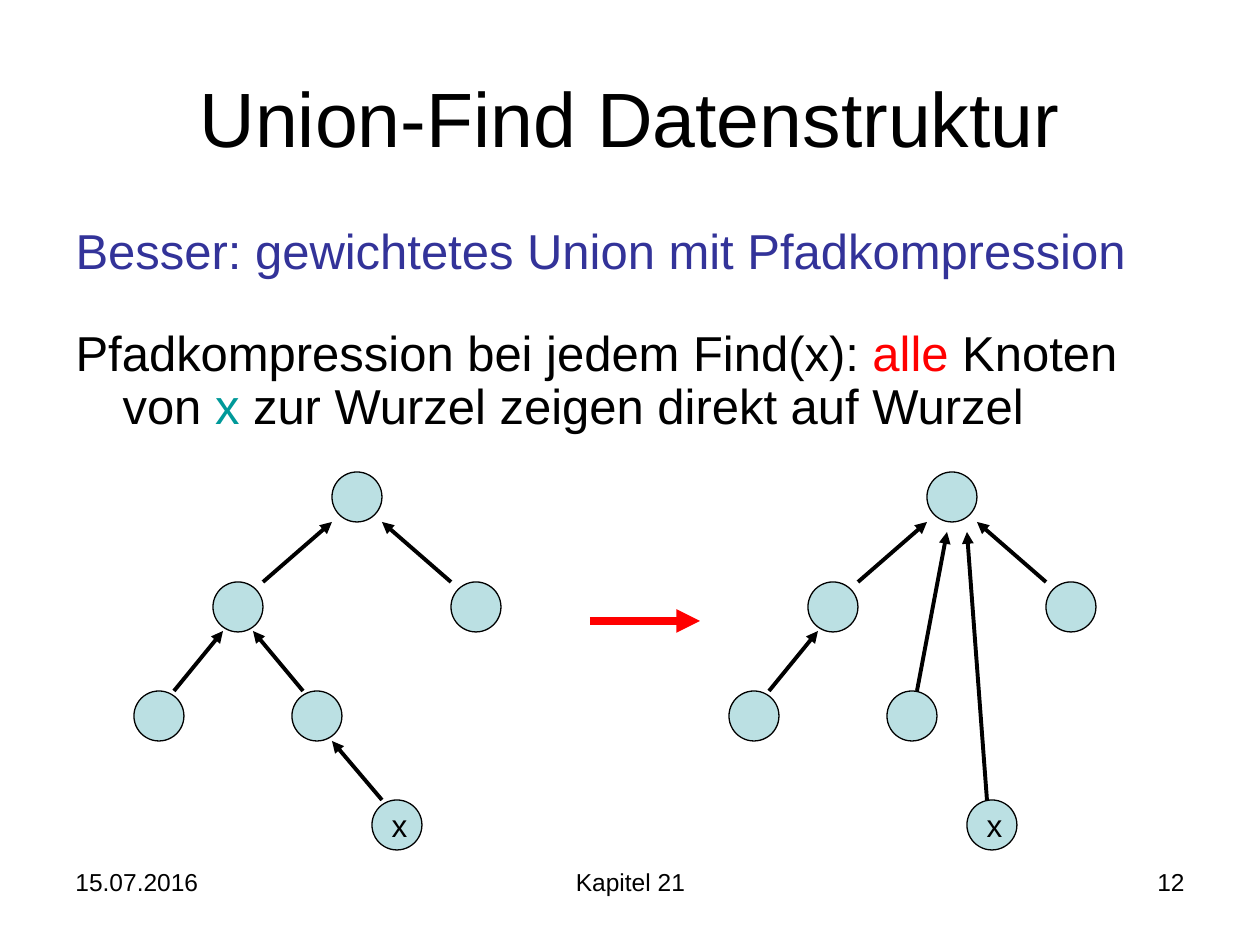
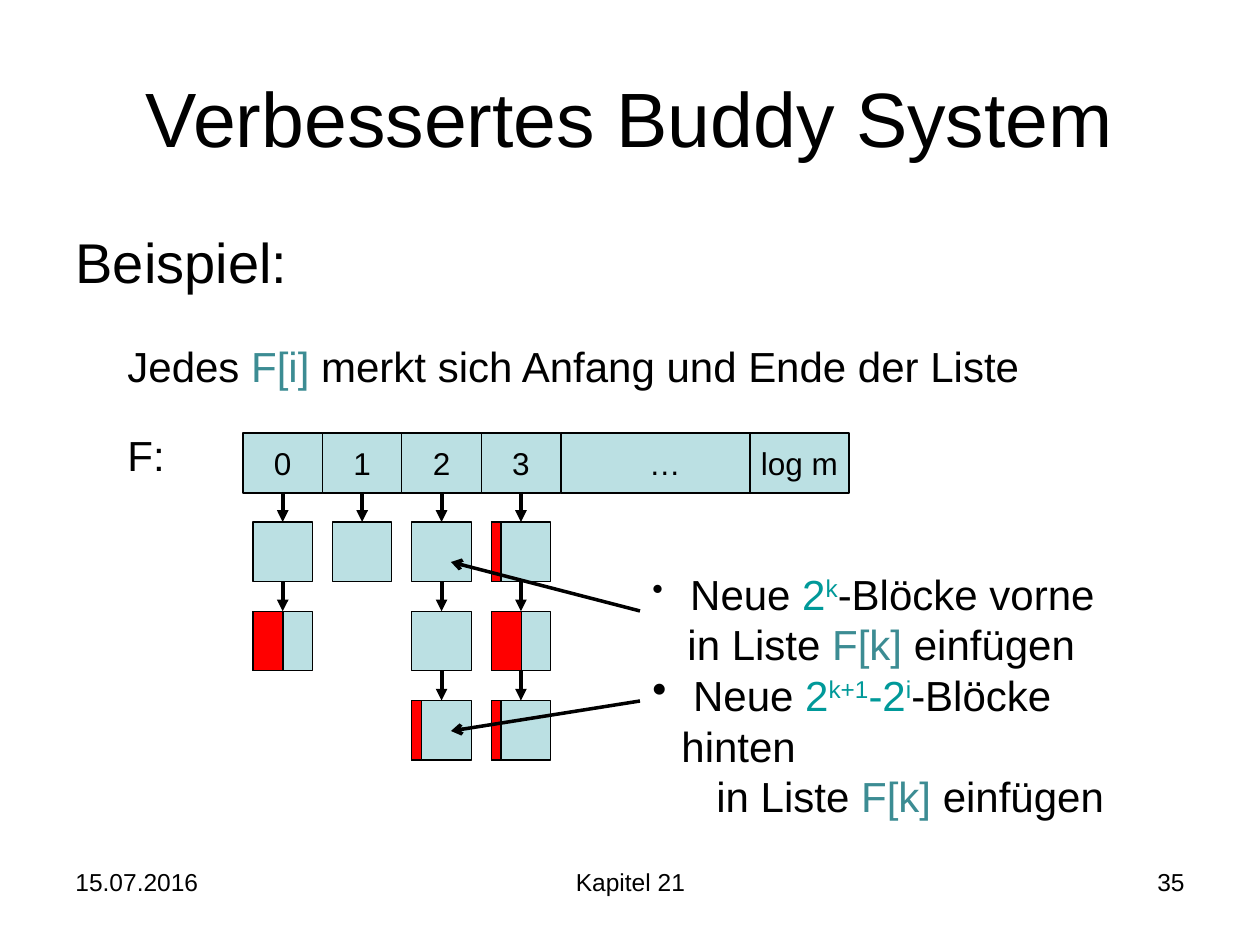
import pptx
import pptx.util
import pptx.dml.color
import pptx.enum.shapes
import pptx.enum.text
import pptx.oxml
import pptx.oxml.ns

# Shared settings: all lengths are px, 126 to the inch
PX = 914400 / 126
FONT = "Arial"
COLOURS = {
    "text": "000000", "heading": "333399", "alert": "FF0000",
    "variable": "009999", "array": "3C8C93", "block": "BBE0E3",
}
ALIGN = pptx.enum.text.PP_ALIGN
KIND = pptx.enum.shapes.MSO_SHAPE
TITLE_AT = (63, 38, 1134, 158)
BODY_AT = (63, 221, 1134, 624)
INK = "text"


def write(paragraph, parts, size, align=ALIGN.LEFT, margin=0, indent=0, bullet=False):
    """Fill a paragraph with (text, colour[, baseline[, size]]) parts."""
    paragraph.alignment = align
    properties = paragraph._p.get_or_add_pPr()
    properties.set("marL", str(round(margin * PX)))
    properties.set("indent", str(round(indent * PX)))
    mark = pptx.oxml.parse_xml(
        f'<a:{"buChar" if bullet else "buNone"} {pptx.oxml.ns.nsdecls("a")}'
        f'{" char=" + chr(34) + "•" + chr(34) if bullet else ""}/>')
    properties.append(mark)
    for text, colour, *extra in parts:
        run = paragraph.add_run()
        run.text = text
        run.font.name = FONT
        run.font.size = pptx.util.Pt(extra[1] if len(extra) > 1 else size)
        run.font.color.rgb = pptx.dml.color.RGBColor.from_string(COLOURS[colour])
        if extra and extra[0]:
            run._r.get_or_add_rPr().set("baseline", str(extra[0] * 1000))


def place(shape, box):
    shape.left, shape.top, shape.width, shape.height = [round(v * PX) for v in box]


deck = pptx.Presentation()
deck.slide_width, deck.slide_height = round(1260 * PX), round(945 * PX)

# Titles, bodies and footers
pages = [
    ("Union-Find Datenstruktur", "12", 28, 0.9, [
        (5.6, [("Besser: gewichtetes Union mit Pfadkompression", "heading")]),
        (28, [("Pfadkompression bei jedem Find(x): ", INK), ("alle ", "alert"),
              ("Knoten von ", INK), ("x ", "variable"),
              ("zur Wurzel zeigen direkt auf Wurzel", INK)]),
    ]),
    ("Verbessertes Buddy System", "35", 32, 1.0, [
        (6.4, [("Beispiel:", INK)]),
    ]),
]
captions = []
for heading, number, body_size, spacing, body_lines in pages:
    slide = deck.slides.add_slide(deck.slide_layouts[1])
    title, body = slide.shapes.title, slide.placeholders[1]
    place(title, TITLE_AT)
    title.text_frame.vertical_anchor = pptx.enum.text.MSO_ANCHOR.MIDDLE
    write(title.text_frame.paragraphs[0], [(heading, INK)], 44, ALIGN.CENTER)
    place(body, BODY_AT)
    for frame in (title.text_frame, body.text_frame):
        frame.auto_size = pptx.enum.text.MSO_AUTO_SIZE.NONE
    for index, (gap, parts) in enumerate(body_lines):
        line = body.text_frame.add_paragraph() if index else body.text_frame.paragraphs[0]
        line.space_before = pptx.util.Pt(gap)
        line.line_spacing = spacing
        write(line, parts, body_size, margin=47, indent=-47)
    captions += [
        (slide, (63, 861, 294, 66), "15.07.2016", ALIGN.LEFT),
        (slide, (431, 861, 399, 66), "Kapitel 21", ALIGN.CENTER),
        (slide, (903, 861, 294, 66), number, ALIGN.RIGHT),
    ]
for slide, box, text, align in captions:
    footer = slide.shapes.add_textbox(0, 0, 0, 0)
    place(footer, box)
    footer.text_frame.word_wrap = True
    write(footer.text_frame.paragraphs[0], [(text, INK)], 14, align)

union_find, buddy = deck.slides
shapes = []   # slide, kind, box, fill, label, label alignment
arrows = []   # slide, start, end, colour, width, head

# Trees before and after path compression
NODE = 50
tree_nodes = [(332, 472, ""), (213, 582, ""), (451, 582, ""),
              (134, 691, ""), (292, 691, ""), (372, 800, "x")]
kept_edges = [((263, 582), (332, 522)), ((451, 582), (382, 522)), ((174, 691), (223, 631))]
long_paths = [((303, 691), (253, 631)), ((382, 800), (332, 741))]
short_paths = [((322, 691), (352, 532)), ((392, 800), (372, 532))]
for shift, paths in ((0, long_paths), (595, short_paths)):
    for x, y, label in tree_nodes:
        shapes.append((union_find, KIND.OVAL, (x + shift, y, NODE, NODE), "block", label, ALIGN.LEFT))
    for (x1, y1), (x2, y2) in kept_edges + paths:
        arrows.append((union_find, (x1 + shift, y1), (x2 + shift, y2), INK, 2.25, "triangle"))
arrows.append((union_find, (590, 621), (700, 621), "alert", 4.5, "triangle"))

# Array F
CELL, ROW = 79.4, 60
array_cells = [(243 + i * CELL, CELL, str(i)) for i in range(4)]
array_cells += [(561, 208, "…"), (750, 99, "log m")]
for x, width, label in array_cells:
    shapes.append((buddy, KIND.RECTANGLE, (x, 433, width, ROW), "block", label, ALIGN.CENTER))

# Block lists below the array: each number is the used (red) width
BLOCK, STEP = 59.5, 89.3
block_lists = [[0, 30], [0], [0, 0, 10], [10, 30, 10]]
for column, used_widths in enumerate(block_lists):
    x = 253 + column * CELL
    for row, used in enumerate(used_widths):
        y = 522 + row * STEP
        shapes.append((buddy, KIND.RECTANGLE, (x, y, BLOCK, BLOCK), "block", "", ALIGN.CENTER))
        if used:
            shapes.append((buddy, KIND.RECTANGLE, (x, y, used, BLOCK), "alert", "", ALIGN.CENTER))
        middle = x + BLOCK / 2
        arrows.append((buddy, (middle, y - 30), (middle, y), INK, 2.25, "triangle"))
arrows.append((buddy, (640, 611), (451, 562), INK, 2, "arrow"))
arrows.append((buddy, (640, 701), (451, 731), INK, 2, "arrow"))

# Draw nodes, cells and blocks
for slide, kind, box, fill, label, align in shapes:
    shape = slide.shapes.add_shape(kind, 0, 0, 0, 0)
    place(shape, box)
    shape.shadow.inherit = False
    shape.fill.solid()
    shape.fill.fore_color.rgb = pptx.dml.color.RGBColor.from_string(COLOURS[fill])
    shape.line.color.rgb = pptx.dml.color.RGBColor.from_string(COLOURS[INK])
    shape.line.width = pptx.util.Pt(0.75)
    if label:
        shape.text_frame.word_wrap = False
        shape.text_frame.vertical_anchor = pptx.enum.text.MSO_ANCHOR.MIDDLE
        write(shape.text_frame.paragraphs[0], [(label, INK)], 18, align)

# Draw arrows
for slide, start, end, colour, width, head in arrows:
    arrow = slide.shapes.add_connector(
        pptx.enum.shapes.MSO_CONNECTOR.STRAIGHT, *[round(v * PX) for v in start + end])
    arrow.line.color.rgb = pptx.dml.color.RGBColor.from_string(COLOURS[colour])
    arrow.line.width = pptx.util.Pt(width)
    arrow.line._get_or_add_ln().append(pptx.oxml.parse_xml(
        f'<a:tailEnd {pptx.oxml.ns.nsdecls("a")} type="{head}"/>'))
    arrow._element.spPr.append(pptx.oxml.parse_xml(
        f'<a:effectLst {pptx.oxml.ns.nsdecls("a")}/>'))

# Explanations on the buddy system: box, line pitch, lines (parts, margin, indent, bullet)
list_place = [("in Liste ", INK), ("F[k]", "array"), (" einfügen", INK)]
notes = [
    ((115, 334, 926, 63), None, [
        ([("Jedes ", INK), ("F[i]", "array"),
          (" merkt sich Anfang und Ende der Liste", INK)], 0, 0, False)]),
    ((115, 423, 70, 63), None, [([("F:", INK)], 0, 0, False)]),
    ((640, 562, 548, 217), 28.9, [
        ([(" ", INK, 0, 18), ("Neue ", INK), ("2", "variable"), ("k", "variable", 30),
          ("-Blöcke vorne", INK)], 29, -29, True),
        (list_place, 35, 0, False),
        ([(" Neue ", INK), ("2", "variable"), ("k+1", "variable", 30), ("-2", "variable"),
          ("i", "variable", 30), ("-Blöcke hinten", INK)], 29, -29, True),
        (list_place, 64, 0, False)]),
]
for box, pitch, lines in notes:
    note = buddy.shapes.add_textbox(0, 0, 0, 0)
    place(note, box)
    note.text_frame.word_wrap = True
    for index, (parts, margin, indent, bullet) in enumerate(lines):
        line = note.text_frame.add_paragraph() if index else note.text_frame.paragraphs[0]
        if pitch:
            line.line_spacing = pptx.util.Pt(pitch)
        write(line, parts, 24, margin=margin, indent=indent, bullet=bullet)

deck.save("out.pptx")
